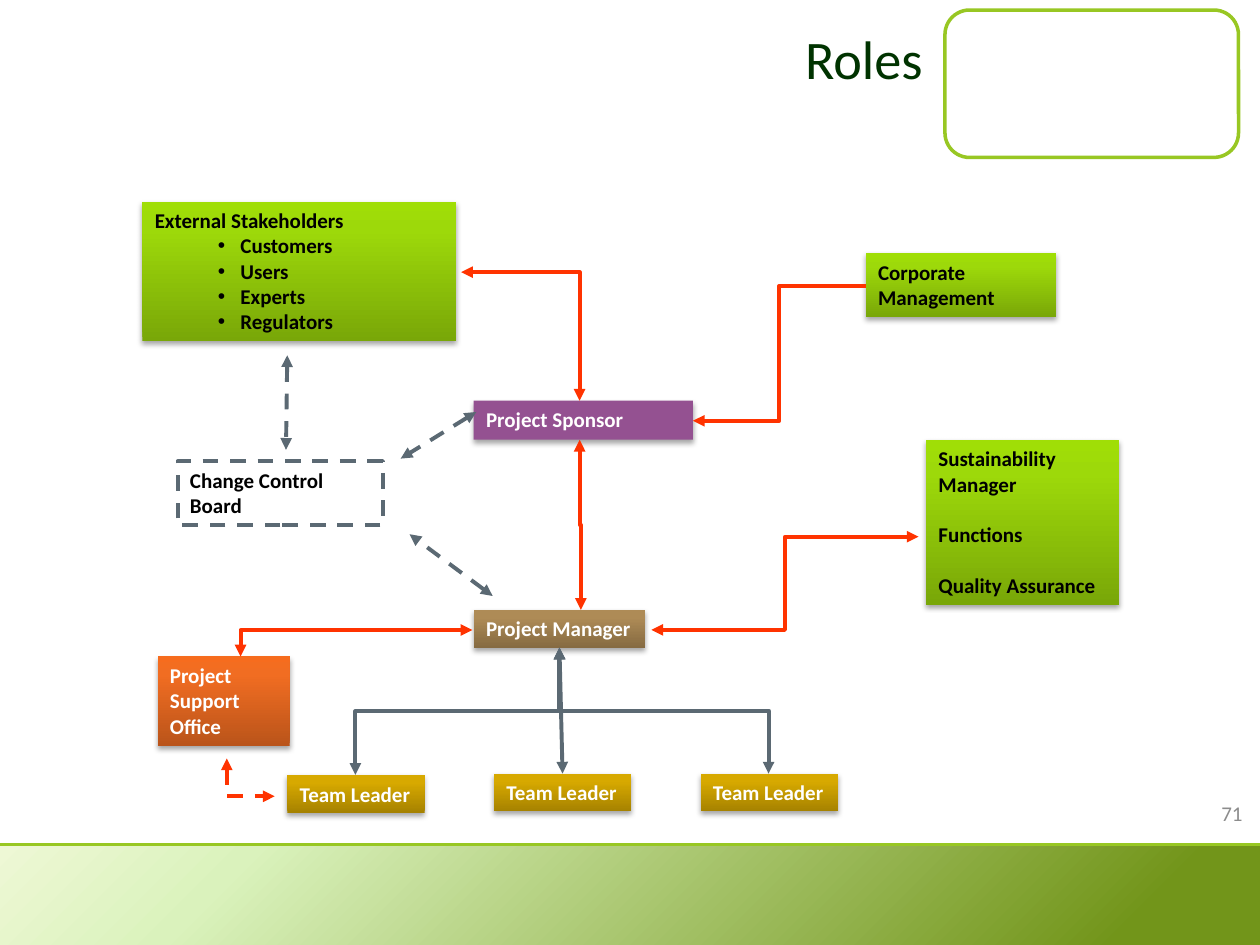
"""Build the project roles chart slide."""
from lxml.etree import SubElement as Sub
from pptx import Presentation
from pptx.dml.color import RGBColor as RGB
from pptx.enum.dml import MSO_LINE
from pptx.enum.shapes import MSO_CONNECTOR as LINK, MSO_SHAPE as FORM
from pptx.enum.text import MSO_ANCHOR as ANCHOR, MSO_AUTO_SIZE as AUTO, PP_ALIGN as ALIGN
from pptx.oxml.ns import qn
from pptx.util import Inches, Pt

INK = {
    "white": "FFFFFF", "black": "000000", "title": "003300", "page": "8C8C8C",
    "edge": "98C723", "red": "FF3300", "slate": "5B6973",
}
FILL = {
    "green": [(0, "79A708"), (80, "9DD90A"), (100, "A0DE06")],
    "brown": [(0, "866B42"), (80, "AE8B56"), (100, "B08C54")],
    "gold": [(0, "A68200"), (80, "D7A900"), (100, "D8A900")],
    "rust": [(0, "BA541A"), (80, "F16D22"), (100, "F66C1E")],
    "plum": [(0, "945191")],
    "foot": [(0, "EEF8D5"), (19, "DAF2BC"), (89, "72951A")],
}


def paint(shape, stops, angle):
    if len(stops) == 1:
        shape.fill.solid()
        shape.fill.fore_color.rgb = RGB.from_string(stops[0][1])
        return
    shape.fill.gradient()
    grad = shape._element.spPr.find(qn("a:gradFill"))
    for kid in list(grad):
        grad.remove(kid)
    group = Sub(grad, qn("a:gsLst"))
    for spot, tone in stops:
        stop = Sub(group, qn("a:gs"), pos=str(spot * 1000))
        Sub(stop, qn("a:srgbClr"), val=tone)
    Sub(grad, qn("a:lin"), ang=str(angle * 60000), scaled="0")


def write(para, text, size, tone, bold=False):
    run = para.add_run()
    run.text = text
    run.font.name = "Calibri"
    run.font.size = Pt(size)
    run.font.bold = bold
    run.font.color.rgb = RGB.from_string(INK[tone])


deck = Presentation()
deck.slide_width, deck.slide_height = Inches(10), Inches(7.5)
shapes = deck.slides.add_slide(deck.slide_layouts[6]).shapes

badge = shapes.add_shape(FORM.ROUNDED_RECTANGLE, Inches(7.5), Inches(0.08), Inches(2.33), Inches(1.17))
badge.shadow.inherit = False
paint(badge, [(0, INK["white"])], 0)
badge.line.color.rgb = RGB.from_string(INK["edge"])
badge.line.width = Pt(2)

foot = shapes.add_shape(FORM.RECTANGLE, 0, Inches(6.71), Inches(10), Inches(0.82))
foot.shadow.inherit = False
paint(foot, FILL["foot"], 45)
foot.line.fill.background()

rule = shapes.add_connector(LINK.STRAIGHT, 0, Inches(6.7), Inches(10), Inches(6.7))
rule.line.color.rgb = RGB.from_string(INK["edge"])
rule.line.width = Pt(1.5)
Sub(rule._element.spPr, qn("a:effectLst"))

labels = [("Roles", 0.42, 0, 7, 0.92, 31, "title"), ("71", 7.63, 6.25, 2.33, 0.4, 12, "page")]
for text, x, y, w, h, size, tone in labels:
    frame = shapes.add_textbox(Inches(x), Inches(y), Inches(w), Inches(h)).text_frame
    frame.word_wrap = True
    frame.vertical_anchor = ANCHOR.MIDDLE
    frame.paragraphs[0].alignment = ALIGN.RIGHT
    write(frame.paragraphs[0], text, size, tone)

boxes = [
    ("holders", 1.13, 1.6, 2.49, 1.11, "green", "black", True,
     ["External Stakeholders", "Customers", "Users", "Experts", "Regulators"]),
    ("corp", 6.87, 2.01, 1.51, 0.51, "green", "black", True, ["Corporate Management"]),
    ("sponsor", 3.76, 3.18, 1.74, 0.31, "plum", "white", True, ["Project Sponsor"]),
    ("manager", 3.76, 4.84, 1.36, 0.3, "brown", "white", False, ["Project Manager"]),
    ("left", 2.28, 6.15, 1.09, 0.3, "gold", "white", False, ["Team Leader"]),
    ("mid", 3.92, 6.14, 1.09, 0.3, "gold", "white", False, ["Team Leader"]),
    ("right", 5.56, 6.14, 1.09, 0.3, "gold", "white", False, ["Team Leader"]),
    ("office", 1.25, 5.21, 1.05, 0.71, "rust", "white", True, ["Project Support Office"]),
    ("board", 1.41, 3.66, 1.63, 0.51, None, "black", True, ["Change Control Board"]),
    ("quality", 7.35, 3.49, 1.53, 1.31, "green", "black", True,
     ["Sustainability Manager", "Functions", "Quality Assurance"]),
]
made = {}
for name, x, y, w, h, fill, tone, wrap, lines in boxes:
    box = made[name] = shapes.add_shape(FORM.RECTANGLE, Inches(x), Inches(y), Inches(w), Inches(h))
    box.shadow.inherit = False
    if fill:
        paint(box, FILL[fill], 270)
        box.line.fill.background()
        glow = Sub(box._element.spPr.find(qn("a:effectLst")), qn("a:outerShdw"), blurRad=str(Pt(3.1)),
                   dist=str(Pt(1.8)), dir="5400000", rotWithShape="0")
        Sub(Sub(glow, qn("a:srgbClr"), val=INK["black"]), qn("a:alpha"), val="35000")
    else:
        box.fill.background()
        box.line.color.rgb = RGB.from_string(INK["slate"])
        box.line.width = Pt(2.25)
        box.line.dash_style = MSO_LINE.DASH
    frame = box.text_frame
    frame.word_wrap = wrap
    frame.auto_size = AUTO.SHAPE_TO_FIT_TEXT
    frame.vertical_anchor = ANCHOR.TOP
    for i, text in enumerate(lines):
        para = frame.add_paragraph() if i else frame.paragraphs[0]
        para.alignment = ALIGN.LEFT
        if name == "holders":
            props = para._p.get_or_add_pPr()
            left, hang = (0.68, -0.18) if i else (0.29, -0.29)
            props.set("marL", str(Inches(left)))
            props.set("indent", str(Inches(hang)))
            if i:
                para.level = 1
                Sub(props, qn("a:buFont"), typeface="Arial")
                Sub(props, qn("a:buChar"), char="•")
        elif i:
            para.space_before = Pt(14.6)
        write(para, text, 12, tone, True)

wires = []
bends = [
    (3.66, 2.16, 4.6, 3.18, "bentConnector2", "red", True),
    (5.5, 3.34, 6.87, 2.27, "bentConnector3", "red", False),
    (3.75, 5, 1.91, 5.21, "bentConnector2", "red", True),
    (7.29, 4.26, 5.17, 5, "bentConnector3", "red", True),
]
for x1, y1, x2, y2, kind, tone, both in bends:
    wire = shapes.add_connector(LINK.ELBOW, Inches(x1), Inches(y1), Inches(x2), Inches(y2))
    wire._element.spPr.find(qn("a:prstGeom")).set("prst", kind)
    wires.append((wire, tone, False, both))

drops = [(4.6, 3.49, 4.61, 4.84, "red"), (2.82, 6.15, 4.44, 5.14, "slate"), (4.44, 5.14, 6.1, 6.14, "slate")]
for x1, y1, x2, y2, tone in drops:
    turn = -1 if y2 > y1 else 1
    cx, cy = (x1 + x2) / 2, (y1 + y2) / 2
    dx, dy = turn * (y2 - y1) / 2, turn * (x1 - x2) / 2
    wire = shapes.add_connector(LINK.ELBOW, Inches(cx - dx), Inches(cy - dy), Inches(cx + dx), Inches(cy + dy))
    wire._element.spPr.find(qn("a:xfrm")).set("rot", str(turn * 90 % 360 * 60000))
    wires.append((wire, tone, False, True))

stem = shapes.add_connector(LINK.STRAIGHT, Inches(4.44), Inches(5.14), Inches(4.46), Inches(6.14))
stem.begin_connect(made["manager"], 2)
stem.end_connect(made["mid"], 0)
wires.append((stem, "slate", False, True))

for x1, y1, x2, y2 in [(3.78, 3.27, 3.18, 3.64), (2.28, 2.82, 2.27, 3.57), (3.91, 4.73, 3.25, 4.24)]:
    wire = shapes.add_connector(LINK.STRAIGHT, Inches(x1), Inches(y1), Inches(x2), Inches(y2))
    wires.append((wire, "slate", True, True))

pen = shapes.build_freeform(Inches(1.8), Inches(6.02))
pen.add_line_segments([(Inches(1.8), Inches(6.32)), (Inches(2.18), Inches(6.32))], close=False)
hook = pen.convert_to_shape()
hook.fill.background()
wires.append((hook, "red", True, True))

for wire, tone, dash, both in wires:
    wire.line.color.rgb = RGB.from_string(INK[tone])
    wire.line.width = Pt(2.25)
    if dash:
        wire.line.dash_style = MSO_LINE.DASH
    stroke = wire._element.spPr.find(qn("a:ln"))
    for end in ["a:headEnd", "a:tailEnd"][:1 + both]:
        Sub(stroke, qn(end), type="triangle")
    Sub(wire._element.spPr, qn("a:effectLst"))

deck.save("out.pptx")
